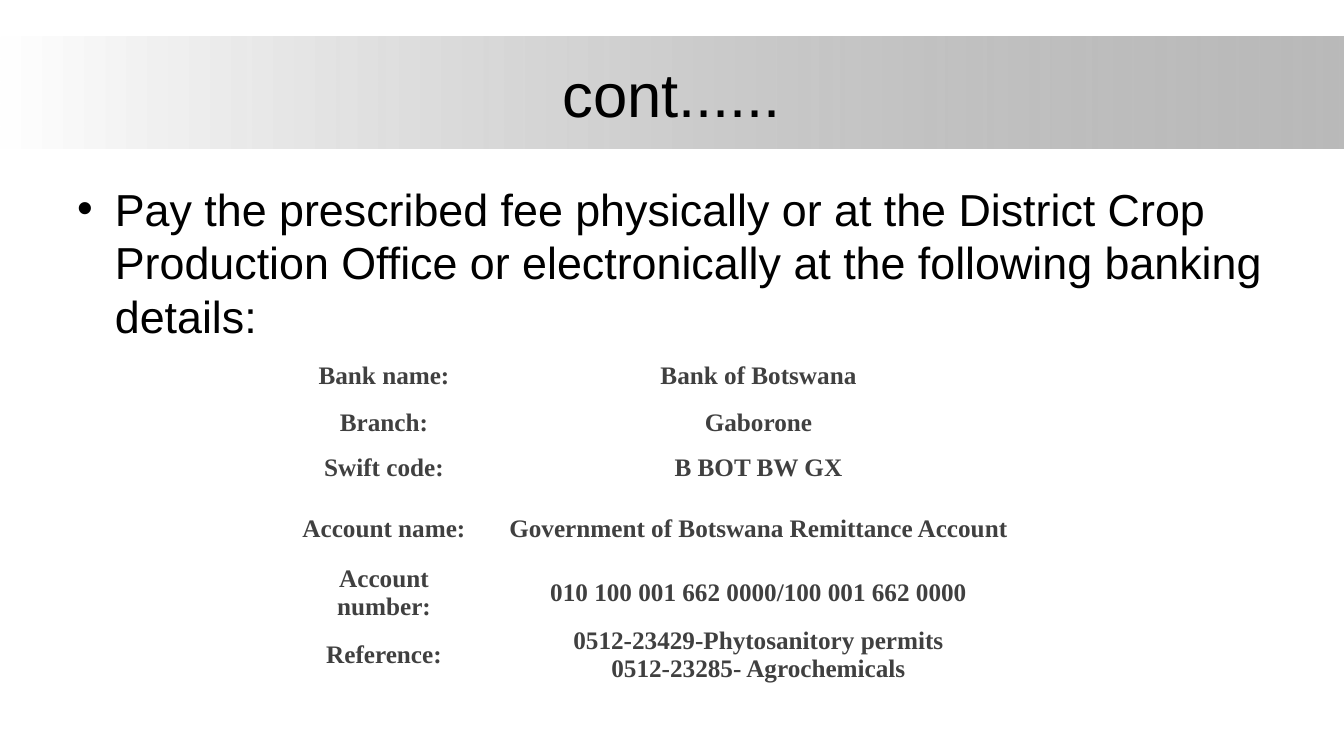
from lxml import etree
from pptx import Presentation
from pptx.dml.color import RGBColor
from pptx.enum.shapes import MSO_SHAPE
from pptx.enum.text import MSO_ANCHOR, PP_ALIGN
from pptx.oxml.ns import qn
from pptx.util import Pt

RECT = MSO_SHAPE.RECTANGLE
MIDDLE = MSO_ANCHOR.MIDDLE
CENTER = PP_ALIGN.CENTER
HEX = {"white": "FFFFFF", "gray": "808080", "ink": "000000", "cell": "404040"}
RGB = {name: RGBColor.from_string(code) for name, code in HEX.items()}


def add_run(para, text, size, face, color, bold=False):
    run = para.add_run()
    run.text = text
    run.font.size = Pt(size)
    run.font.name = face
    run.font.bold = bold
    run.font.color.rgb = RGB[color]


prs = Presentation()
prs.slide_width, prs.slide_height = Pt(960), Pt(540)
slide = prs.slides.add_slide(prs.slide_layouts[5])
shapes = slide.shapes

# Gradient band behind the title
band = shapes.add_shape(RECT, Pt(0), Pt(26), Pt(960), Pt(80))
band.shadow.inherit = False
band.line.fill.background()
band.fill.gradient()
band.fill.gradient_angle = 0
for stop, color, spot in zip(band.fill.gradient_stops, ("white", "gray"), (0, 1)):
    stop.color.rgb = RGB[color]
    stop.position = spot
tint = band.element.spPr.findall(".//" + qn("a:srgbClr"))[-1]
etree.SubElement(tint, qn("a:alpha"), val="54000")
shapes.element.insert(2, band.element)

# Title
title = shapes.title
title.left, title.top, title.width, title.height = Pt(48), Pt(21.6), Pt(864), Pt(90)
title.text_frame.vertical_anchor = MIDDLE
para = title.text_frame.paragraphs[0]
para.alignment = CENTER
add_run(para, "cont......", 44, "Arial", "ink")

# Bullet text
body = shapes.add_textbox(Pt(48), Pt(126), Pt(864), Pt(356.4))
body.text_frame.word_wrap = True
para = body.text_frame.paragraphs[0]
props = para._p.get_or_add_pPr()
props.set("marL", str(Pt(27)))
props.set("indent", str(Pt(-27)))
etree.SubElement(props, qn("a:buFont"), typeface="Arial")
etree.SubElement(props, qn("a:buChar"), char="•")
add_run(para, "Pay the prescribed fee physically or at the District Crop Production Office "
        "or electronically at the following banking details:", 32, "Arial", "ink")

# Bank details: row height, label, lines of the value
ROWS = [
    (45.4, "Bank name:", ["Bank of Botswana"]),
    (23, "Branch:", ["Gaborone"]),
    (41, "Swift code:", ["B BOT BW GX"]),
    (45.4, "Account name:", ["Government of Botswana Remittance Account"]),
    (46, "Account number:", ["010 100 001 662 0000/100 001 662 0000"]),
    (23, "Reference:", ["0512-23429-Phytosanitory permits", "0512-23285- Agrochemicals"]),
]
WIDTHS = (121, 414)
high = sum(row[0] for row in ROWS)
table = shapes.add_table(len(ROWS), 2, Pt(213.8), Pt(245.5), Pt(sum(WIDTHS)), Pt(high)).table
table.first_row = table.horz_banding = False
for col, width in zip(table.columns, WIDTHS):
    col.width = Pt(width)
for row, (height, label, value) in zip(table.rows, ROWS):
    row.height = Pt(height)
    for cell, lines in zip(row.cells, ([label], value)):
        cell.fill.background()
        cell.vertical_anchor = MIDDLE
        cell.margin_left = cell.margin_right = cell.margin_top = cell.margin_bottom = 0
        frame = cell.text_frame
        for i, line in enumerate(lines):
            para = frame.add_paragraph() if i else frame.paragraphs[0]
            para.alignment = CENTER
            add_run(para, line, 18, "Times New Roman", "cell", True)

prs.save("out.pptx")
